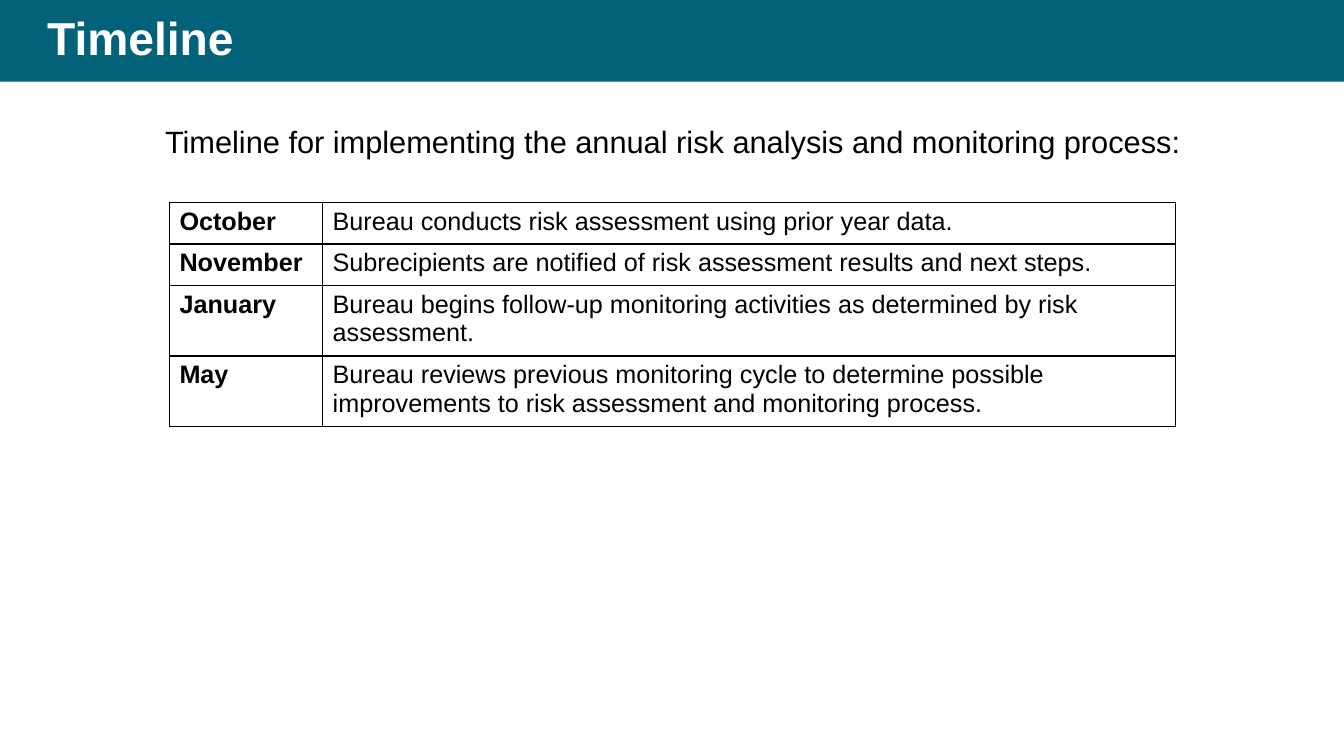
from dataclasses import dataclass

from lxml import etree
from pptx import Presentation
from pptx import util as u
from pptx.dml.color import RGBColor
from pptx.enum import shapes, text
from pptx.oxml.ns import qn


@dataclass(frozen=True)
class Theme:
    font: str = "Arial"
    band: str = "03617A"
    light: str = "FFFFFF"
    ink: str = "000000"
    title_size: float = 33
    intro_size: float = 22
    table_size: float = 18
    border_width: float = 1


@dataclass(frozen=True)
class Box:
    left: float
    top: float
    width: float
    height: float

    def lengths(self) -> tuple:
        return tuple(u.Cm(v) for v in (self.left, self.top, self.width, self.height))


@dataclass(frozen=True)
class Milestone:
    month: str
    activity: str


THEME = Theme()
SLIDE_WIDTH, SLIDE_HEIGHT = 33.87, 19.05
BAND_HEIGHT = 2.06
MONTH_WIDTH, ACTIVITY_WIDTH, ROW_HEIGHT = 3.86, 21.49, 1.04

MILESTONES = [
    Milestone("October", "Bureau conducts risk assessment using prior year data."),
    Milestone("November", "Subrecipients are notified of risk assessment results and next steps."),
    Milestone("January", "Bureau begins follow-up monitoring activities as determined by risk assessment."),
    Milestone("May", "Bureau reviews previous monitoring cycle to determine possible "
                     "improvements to risk assessment and monitoring process."),
]


def write(frame, words: str, *, size: float, color: str = THEME.ink, bold: bool = False,
          line_spacing: float = 1.0, space_before: float = 0, indent: float = 0,
          anchor=text.MSO_ANCHOR.TOP) -> None:
    """Fill a text frame with one formatted paragraph."""
    frame.word_wrap = True
    frame.vertical_anchor = anchor
    paragraph = frame.paragraphs[0]
    paragraph.alignment = text.PP_ALIGN.LEFT
    paragraph.line_spacing = line_spacing
    paragraph.space_before = u.Pt(space_before)
    if indent:
        properties = paragraph._p.get_or_add_pPr()
        properties.set("marL", str(u.Cm(indent)))
        properties.set("indent", "0")
    run = paragraph.add_run()
    run.text = words
    run.font.name = THEME.font
    run.font.size = u.Pt(size)
    run.font.bold = bold
    run.font.color.rgb = RGBColor.from_string(color)


def add_band(slide, box: Box) -> None:
    band = slide.shapes.add_shape(shapes.MSO_SHAPE.RECTANGLE, *box.lengths())
    band.shadow.inherit = False
    band.fill.solid()
    band.fill.fore_color.rgb = RGBColor.from_string(THEME.band)
    band.line.fill.background()


def add_text(slide, box: Box, words: str, **style) -> None:
    write(slide.shapes.add_textbox(*box.lengths()).text_frame, words, **style)


def outline(cell) -> None:
    """Draw all four borders, ahead of the cell's fill in the XML."""
    properties = cell._tc.get_or_add_tcPr()
    for position, side in enumerate(("a:lnL", "a:lnR", "a:lnT", "a:lnB")):
        line = etree.Element(qn(side), w=str(u.Pt(THEME.border_width)))
        fill = etree.SubElement(line, qn("a:solidFill"))
        etree.SubElement(fill, qn("a:srgbClr"), val=THEME.ink)
        properties.insert(position, line)


def add_schedule(slide, box: Box, milestones: list[Milestone]) -> None:
    schedule = slide.shapes.add_table(len(milestones), 2, *box.lengths()).table
    schedule.first_row = schedule.horz_banding = False
    for column, width in zip(schedule.columns, (MONTH_WIDTH, ACTIVITY_WIDTH)):
        column.width = u.Cm(width)
    for row, milestone in zip(schedule.rows, milestones):
        row.height = u.Cm(ROW_HEIGHT)
        for cell, words, bold in zip(row.cells, (milestone.month, milestone.activity), (True, False)):
            cell.fill.background()
            outline(cell)
            write(cell.text_frame, words, size=THEME.table_size, bold=bold)


def main() -> None:
    deck = Presentation()
    deck.slide_width, deck.slide_height = u.Cm(SLIDE_WIDTH), u.Cm(SLIDE_HEIGHT)
    slide = deck.slides.add_slide(deck.slide_layouts[6])

    # Title band
    add_band(slide, Box(0, 0, SLIDE_WIDTH, BAND_HEIGHT))
    add_text(slide, Box(0.94, 0, 31.29, BAND_HEIGHT), "Timeline", size=THEME.title_size,
             color=THEME.light, bold=True, line_spacing=0.9, anchor=text.MSO_ANCHOR.MIDDLE)

    # Introduction
    add_text(slide, Box(3.61, 3.07, 27.08, 12.09),
             "Timeline for implementing the annual risk analysis and monitoring process:",
             size=THEME.intro_size, line_spacing=0.9, space_before=7.5, indent=0.3)

    # Schedule by month
    add_schedule(slide, Box(4.27, 5.11, MONTH_WIDTH + ACTIVITY_WIDTH, ROW_HEIGHT * len(MILESTONES)),
                 MILESTONES)

    deck.save("out.pptx")


if __name__ == "__main__":
    main()
